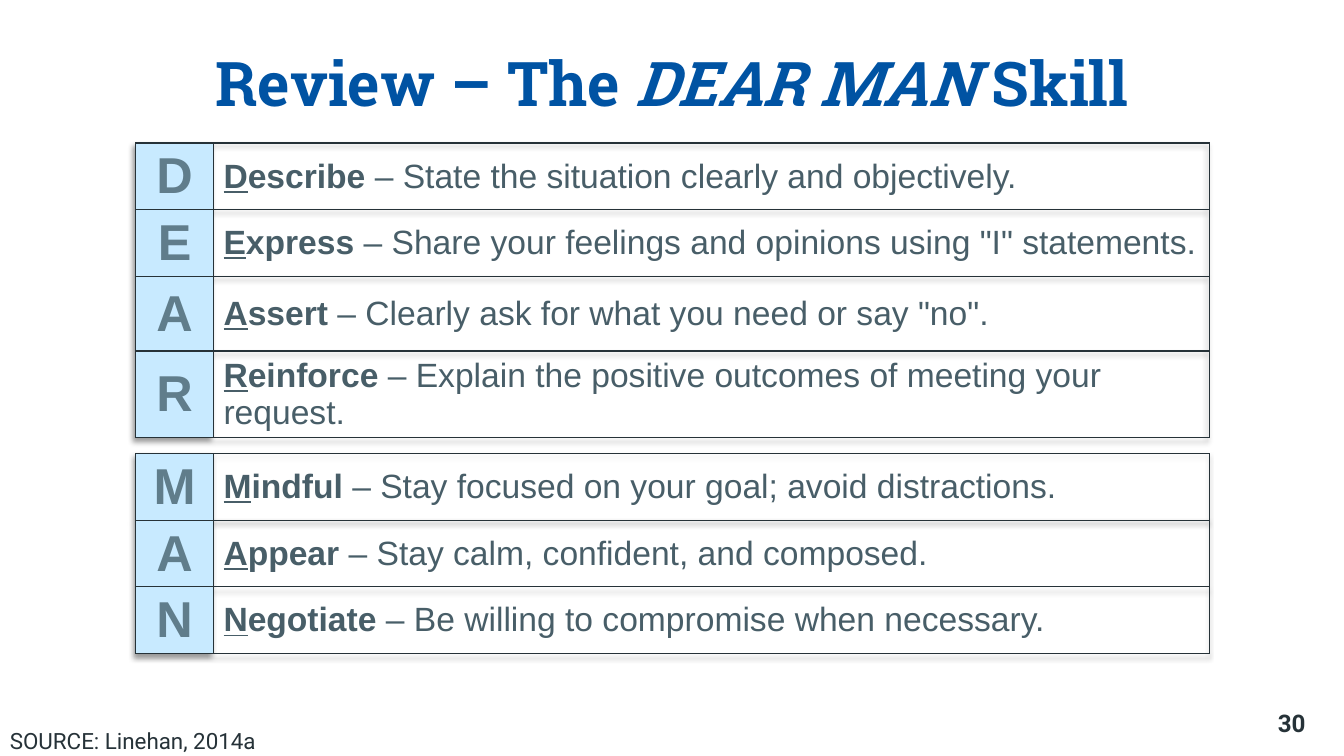
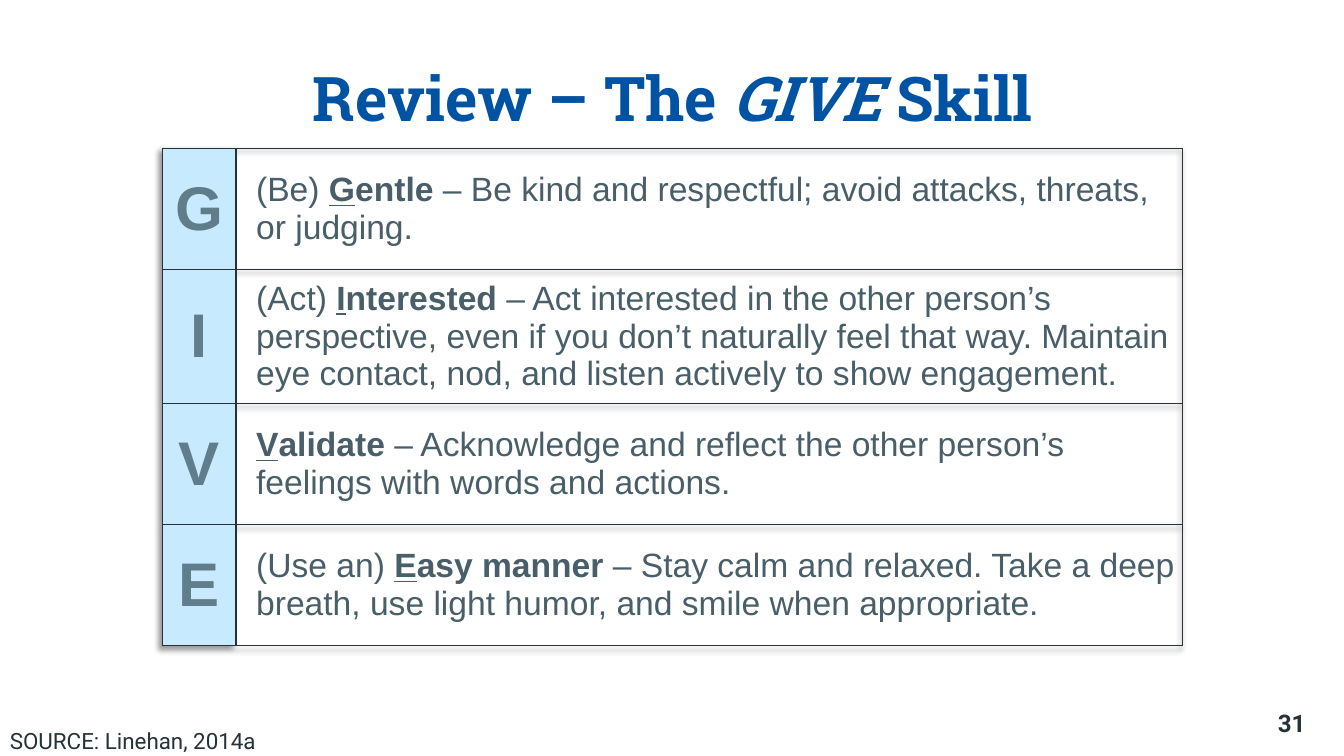
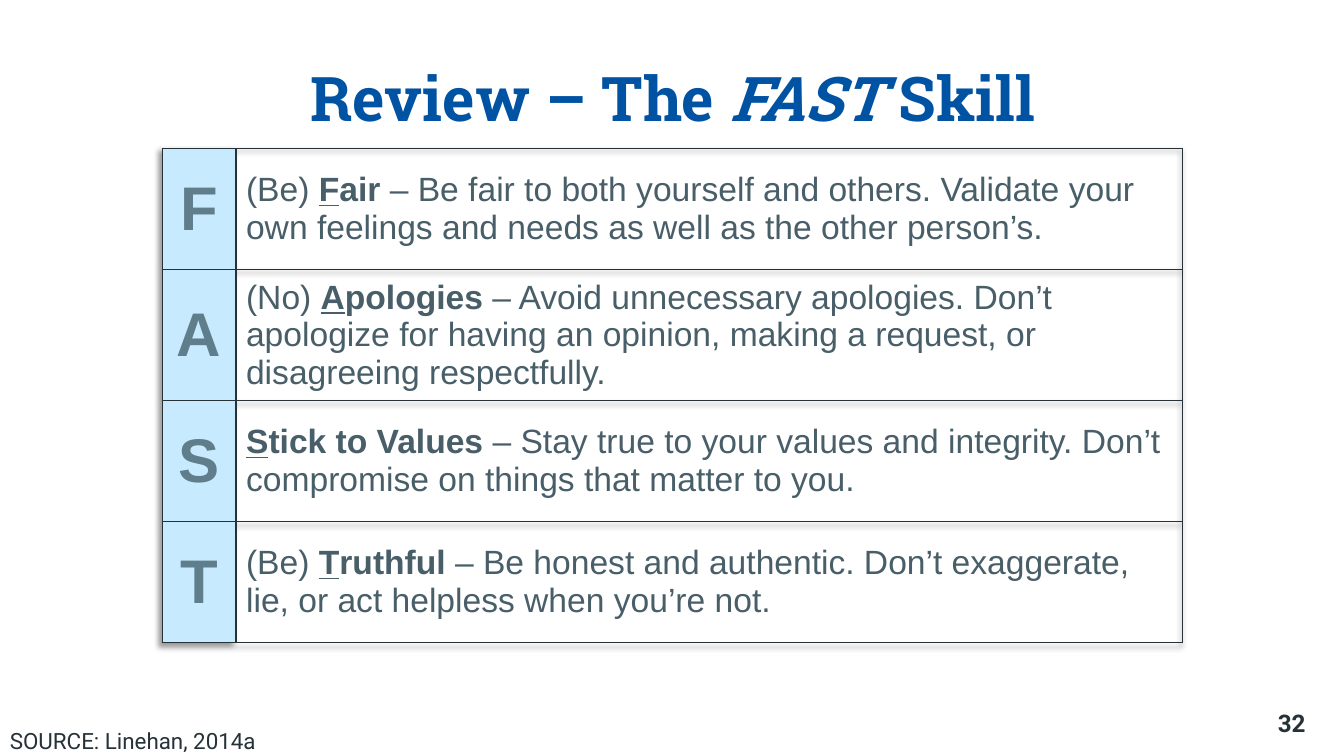
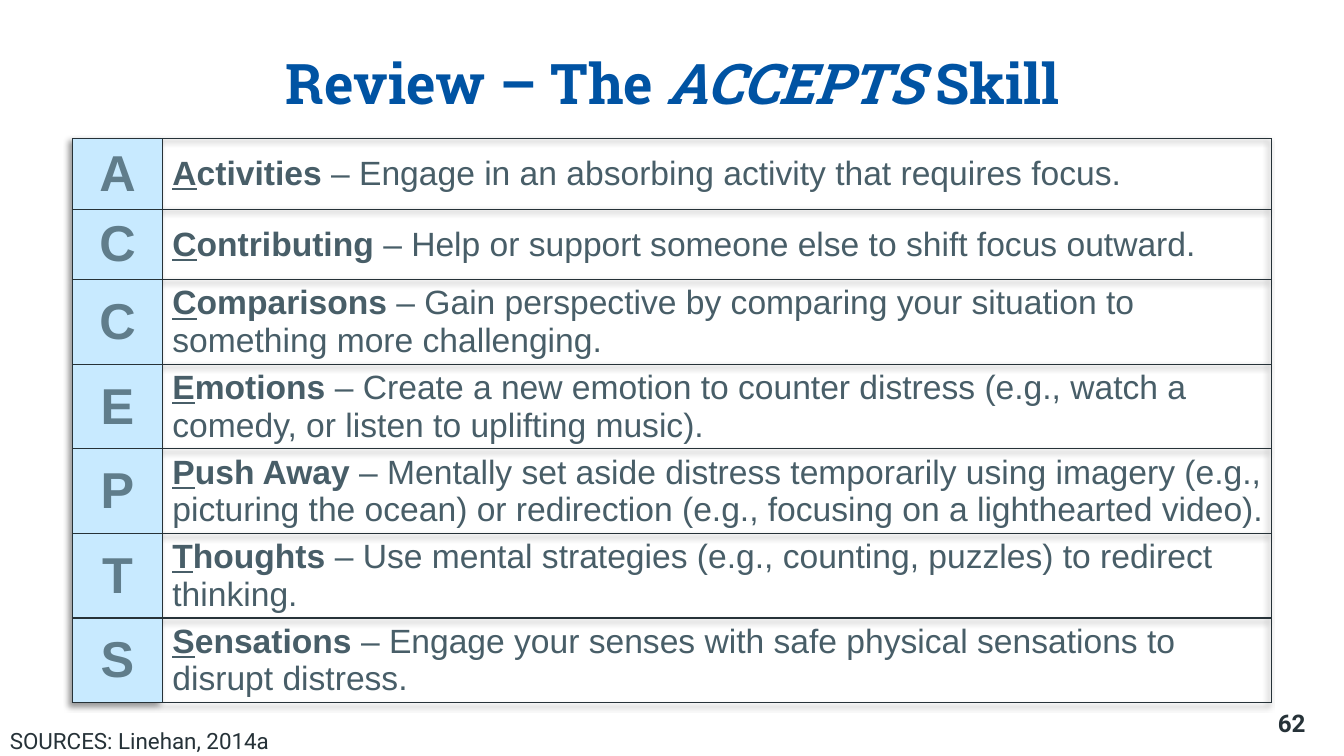
from lxml import etree
from pptx import Presentation
from pptx.dml.color import RGBColor
from pptx.enum.text import MSO_ANCHOR, PP_ALIGN
from pptx.oxml.ns import qn
from pptx.util import Pt

LEFT, CENTER, RIGHT = PP_ALIGN.LEFT, PP_ALIGN.CENTER, PP_ALIGN.RIGHT
TOP, MIDDLE = MSO_ANCHOR.TOP, MSO_ANCHOR.MIDDLE
BLANK = 6

COLORS = {
    "title": "0053A3",
    "ink": "263238",
    "letter": "607D8B",
    "body": "485E68",
    "letter_fill": "C8EAFF",
    "shadow": "000000",
}
TITLE_FONT, BODY_FONT, FOOTER_FONT = "Roboto Slab", "Arial", "Roboto"
BODY_SIZE = 24
LETTER_MARGINS = (3.6, 3.6, 2.2)

SLIDES = [
    {
        "skill": "DEAR MAN", "title_box": (56, 27.5, 848, 62.5), "title_size": 44,
        "source": "SOURCE: Linehan, 2014a", "number": 30,
        "letter_size": 36, "margins": (7.2, 3.6, 2.2),
        "left": 97, "columns": (55.5, 711.5),
        "tables": [
            {"top": 102.2, "rows": [
                (46, "", "Describe", "State the situation clearly and objectively."),
                (46, "", "Express", 'Share your feelings and opinions using "I" statements.'),
                (53.3, "", "Assert", 'Clearly ask for what you need or say "no".'),
                (60, "", "Reinforce", "Explain the positive outcomes of meeting your request."),
            ]},
            {"top": 324, "rows": [
                (47.5, "", "Mindful", "Stay focused on your goal; avoid distractions."),
                (47.5, "", "Appear", "Stay calm, confident, and composed."),
                (47.5, "", "Negotiate", "Be willing to compromise when necessary."),
            ]},
        ],
    },
    {
        "skill": "GIVE", "title_box": (83, 32.5, 795, 73.5), "title_size": 44,
        "source": "SOURCE: Linehan, 2014a", "number": 31,
        "letter_size": 44, "margins": (14.4, 3.6, 2.2),
        "left": 116, "columns": (52.6, 676),
        "tables": [
            {"top": 106, "rows": [
                (86.4, "(Be) ", "Gentle",
                 "Be kind and respectful; avoid attacks, threats, or judging."),
                (95.8, "(Act) ", "Interested",
                 "Act interested in the other person’s perspective, even if you don’t "
                 "naturally feel that way. Maintain eye contact, nod, and listen actively "
                 "to show engagement."),
                (86.4, "", "Validate",
                 "Acknowledge and reflect the other person’s feelings with words and actions."),
                (86.4, "(Use an) ", "Easy manner",
                 "Stay calm and relaxed. Take a deep breath, use light humor, and smile "
                 "when appropriate."),
            ]},
        ],
    },
    {
        "skill": "FAST", "title_box": (83, 32.5, 795, 73.5), "title_size": 44,
        "source": "SOURCE: Linehan, 2014a", "number": 32,
        "letter_size": 44, "margins": (7.2, 3.6, 3.6),
        "left": 116, "columns": (52.6, 676),
        "tables": [
            {"top": 106, "rows": [
                (86.4, "(Be) ", "Fair",
                 "Be fair to both yourself and others. Validate your own feelings and "
                 "needs as well as the other person’s."),
                (87.6, "(No) ", "Apologies",
                 "Avoid unnecessary apologies. Don’t apologize for having an opinion, "
                 "making a request, or disagreeing respectfully."),
                (86.4, "", "Stick to Values",
                 "Stay true to your values and integrity. Don’t compromise on things that "
                 "matter to you."),
                (86.4, "(Be) ", "Truthful",
                 "Be honest and authentic. Don’t exaggerate, lie, or act helpless when "
                 "you’re not."),
            ]},
        ],
    },
    {
        "skill": "ACCEPTS", "title_box": (60, 20, 841, 77), "title_size": 40,
        "source": "SOURCES: Linehan, 2014a", "number": 62,
        "letter_size": 36, "margins": (7.2, 0, 1.4),
        "left": 51.8, "columns": (64.2, 792),
        "tables": [
            {"top": 99, "rows": [
                (50.4, "", "Activities", "Engage in an absorbing activity that requires focus."),
                (50.4, "", "Contributing", "Help or support someone else to shift focus outward."),
                (59.7, "", "Comparisons",
                 "Gain perspective by comparing your situation to something more challenging."),
                (59.7, "", "Emotions",
                 "Create a new emotion to counter distress (e.g., watch a comedy, or listen "
                 "to uplifting music)."),
                (59.7, "", "Push Away",
                 "Mentally set aside distress temporarily using imagery (e.g., picturing the "
                 "ocean) or redirection (e.g., focusing on a lighthearted video)."),
                (59.7, "", "Thoughts",
                 "Use mental strategies (e.g., counting, puzzles) to redirect thinking."),
                (59.7, "", "Sensations",
                 "Engage your senses with safe physical sensations to disrupt distress."),
            ]},
        ],
    },
]


def rgb(name):
    return RGBColor.from_string(COLORS[name])


def add_color(parent, name):
    return etree.SubElement(parent, qn("a:srgbClr"), val=COLORS[name])


def write(p, runs, font, size, color, align=LEFT, bold=False):
    p.alignment = align
    p.font.name, p.font.size, p.font.bold = font, Pt(size), bold
    p.font.color.rgb = rgb(color)
    for text, style in runs:
        r = p.add_run()
        r.text = text
        for name, value in style.items():
            setattr(r.font, name, value)


def add_text(slide, box, runs, font, size, color, align=LEFT, bold=False,
             anchor=TOP, inset=7.2):
    tf = slide.shapes.add_textbox(*map(Pt, box)).text_frame
    tf.word_wrap = True
    tf.vertical_anchor = anchor
    tf.margin_top = tf.margin_bottom = Pt(inset)
    write(tf.paragraphs[0], runs, font, size, color, align, bold)


def format_cell(cell, margins, fill=None):
    left, right, vertical = margins
    cell.margin_left, cell.margin_right = Pt(left), Pt(right)
    cell.margin_top = cell.margin_bottom = Pt(vertical)
    cell.vertical_anchor = MIDDLE
    tc_pr = cell._tc.get_or_add_tcPr()
    for side in ("lnL", "lnR", "lnT", "lnB"):
        ln = etree.SubElement(tc_pr, qn("a:" + side), w=str(Pt(1)))
        add_color(etree.SubElement(ln, qn("a:solidFill")), "ink")
    if fill:
        cell.fill.solid()
        cell.fill.fore_color.rgb = rgb(fill)
    else:
        cell.fill.background()


def add_table_shadow(table):
    effects = etree.Element(qn("a:effectLst"))
    shadow = etree.SubElement(effects, qn("a:outerShdw"), blurRad=str(Pt(4)),
                              dist=str(Pt(3)), dir="8100000", algn="tr", rotWithShape="0")
    etree.SubElement(add_color(shadow, "shadow"), qn("a:alpha"), val="40000")
    table._tbl.tblPr.insert(0, effects)


def add_skill_table(slide, data, top, rows):
    columns = data["columns"]
    height = sum(row[0] for row in rows)
    table = slide.shapes.add_table(len(rows), 2, Pt(data["left"]), Pt(top),
                                   Pt(sum(columns)), Pt(height)).table
    table.first_row = table.horz_banding = False
    add_table_shadow(table)
    for column, width in zip(table.columns, columns):
        column.width = Pt(width)
    for i, (row_height, prefix, word, meaning) in enumerate(rows):
        table.rows[i].height = Pt(row_height)
        letter, body = table.cell(i, 0), table.cell(i, 1)
        format_cell(letter, LETTER_MARGINS, "letter_fill")
        write(letter.text_frame.paragraphs[0], [(word[0], {})], BODY_FONT,
              data["letter_size"], "letter", CENTER, True)
        format_cell(body, data["margins"])
        runs = [(prefix, {})] if prefix else []
        runs += [(word[0], {"bold": True, "underline": True}),
                 (word[1:] + " ", {"bold": True}),
                 ("– " + meaning, {})]
        write(body.text_frame.paragraphs[0], runs, BODY_FONT, BODY_SIZE, "body")


def build_slide(prs, data):
    slide = prs.slides.add_slide(prs.slide_layouts[BLANK])
    title = [("Review – The ", {}), (data["skill"] + " ", {"italic": True}), ("Skill", {})]
    add_text(slide, data["title_box"], title, TITLE_FONT, data["title_size"], "title",
             CENTER, True, MIDDLE)
    for table in data["tables"]:
        add_skill_table(slide, data, **table)
    add_text(slide, (0, 515.5, 230, 24.5), [(data["source"], {})], FOOTER_FONT, 16, "ink",
             inset=3.6)
    add_text(slide, (882, 499, 57.6, 41), [(str(data["number"]), {})], FOOTER_FONT, 17.3,
             "ink", RIGHT, True)


def main():
    prs = Presentation()
    prs.slide_width, prs.slide_height = Pt(960), Pt(540)
    for data in SLIDES:
        build_slide(prs, data)
    prs.save("out.pptx")


if __name__ == "__main__":
    main()
